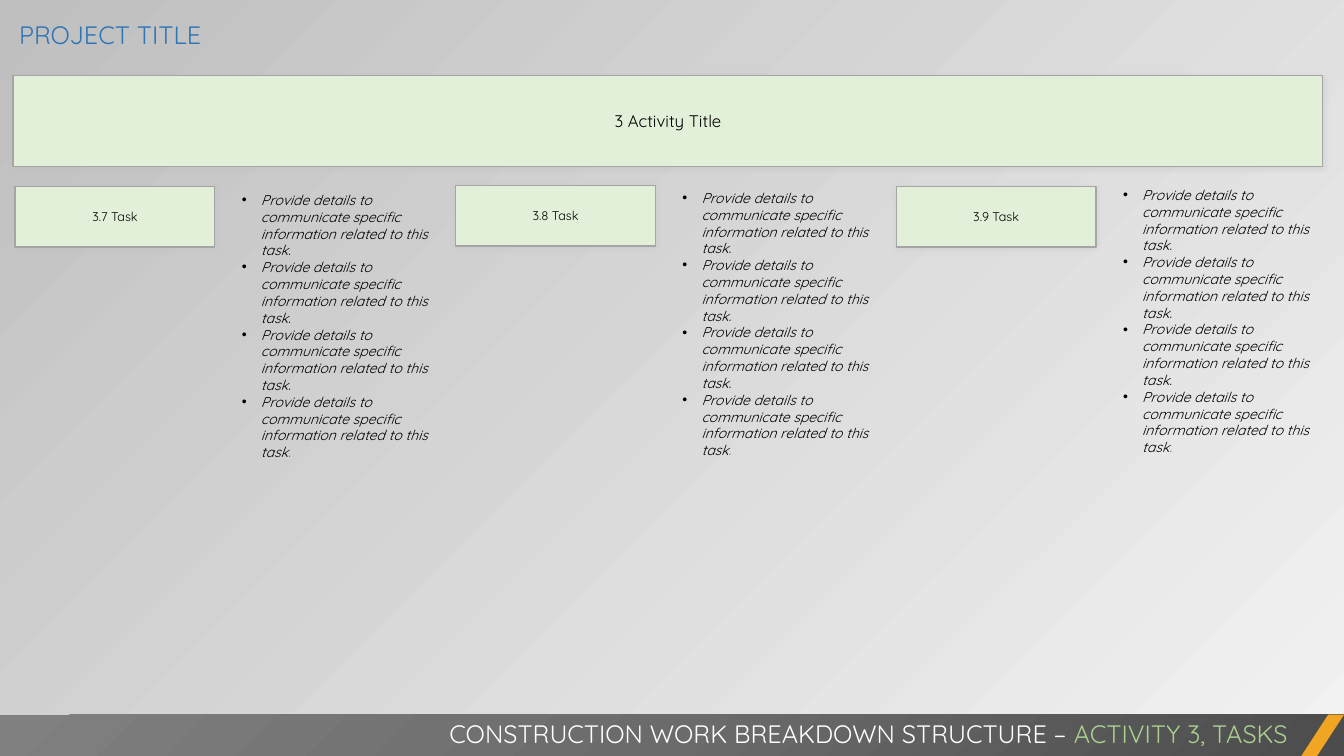
from dataclasses import dataclass

from pptx import Presentation
from pptx.dml.color import RGBColor
from pptx.enum.shapes import MSO_SHAPE as Kind
from pptx.enum.text import MSO_ANCHOR as Anchor, MSO_AUTO_SIZE as Fit, PP_ALIGN as Align
from pptx.oxml import parse_xml
from pptx.oxml.ns import nsdecls, qn
from pptx.util import Inches, Pt

# Colours
BLACK = RGBColor(0x00, 0x00, 0x00)
WHITE = RGBColor(0xFF, 0xFF, 0xFF)
LIGHT = RGBColor(0xF2, 0xF2, 0xF2)
SILVER = RGBColor(0xBF, 0xBF, 0xBF)
GREY = RGBColor(0xA5, 0xA5, 0xA5)
PALE = RGBColor(0xE2, 0xF0, 0xD9)
GREEN = RGBColor(0xA9, 0xD1, 0x8E)
BLUE = RGBColor(0x2E, 0x75, 0xB6)
AMBER = RGBColor(0xF0, 0xA6, 0x22)
BAR = ((0, RGBColor(0x4C, 0x4C, 0x4C)), (50, RGBColor(0x6B, 0x6B, 0x6B)),
       (100, RGBColor(0x80, 0x80, 0x80)))

# Grid, in inches
WIDE, HIGH = 13.33, 7.5
LEFT, STEP = 0.15, 4.37   # first column and column pitch
SHIFT = 2.15              # from a task to its details
FOOT, DEPTH = 7.09, 0.42  # footer bar

FACE = "Quicksand"
DETAIL = "Provide details to communicate specific information related to this task"
COUNT = 4


@dataclass(frozen=True)
class Task:
    label: str
    top: float
    note_top: float


TASKS = (Task("3.7 Task", 1.85, 1.85),
         Task("3.8 Task", 1.84, 1.83),
         Task("3.9 Task", 1.85, 1.80))

deck = Presentation()
deck.slide_width, deck.slide_height = Inches(WIDE), Inches(HIGH)
slide = deck.slides.add_slide(deck.slide_layouts[6])


def style(para, size: float, color: RGBColor, italic: bool = False) -> None:
    font = para.font
    font.name, font.size, font.italic = FACE, Pt(size), italic
    font.color.rgb = color


def add_plain(kind, x: float, y: float, w: float, h: float, color: RGBColor):
    shape = slide.shapes.add_shape(kind, *map(Inches, (x, y, w, h)))
    shape.shadow.inherit = False
    shape.fill.solid()
    shape.fill.fore_color.rgb = color
    shape.line.fill.background()
    return shape


def add_card(text: str, x: float, y: float, w: float, h: float, size: float) -> None:
    card = add_plain(Kind.RECTANGLE, x, y, w, h, PALE)
    card.line.color.rgb, card.line.width = GREY, Pt(1)
    card._element.spPr.find(qn("a:effectLst")).append(parse_xml(
        f'<a:outerShdw {nsdecls("a")} blurRad="{Pt(4)}" dist="{Pt(1)}" dir="5400000" '
        f'algn="t" rotWithShape="0"><a:srgbClr val="{SILVER}"><a:alpha val="40000"/>'
        '</a:srgbClr></a:outerShdw>'))
    card.text_frame.vertical_anchor = Anchor.MIDDLE
    para = card.text_frame.paragraphs[0]
    para.text, para.alignment = text, Align.CENTER
    style(para, size, BLACK)


def add_box(x: float, y: float, w: float, h: float):
    frame = slide.shapes.add_textbox(*map(Inches, (x, y, w, h))).text_frame
    frame.word_wrap, frame.auto_size = True, Fit.SHAPE_TO_FIT_TEXT
    return frame


def add_run(para, text: str, color: RGBColor) -> None:
    run = para.add_run()
    run.text = text
    run.font.color.rgb = color


def add_notes(x: float, y: float) -> None:
    frame = add_box(x, y, 2.06, 3)
    for i in range(COUNT):
        para = frame.add_paragraph() if i else frame.paragraphs[0]
        props = para._p.get_or_add_pPr()
        props.set("marL", str(Inches(0.19)))
        props.set("indent", str(Inches(-0.19)))
        props.append(parse_xml(f'<a:buFont {nsdecls("a")} typeface="Arial"/>'))
        props.append(parse_xml(f'<a:buChar {nsdecls("a")} char="•"/>'))
        style(para, 10, BLACK, italic=True)
        last = i == COUNT - 1
        para.add_run().text = DETAIL if last else DETAIL + "."
        if last:
            add_run(para, ".", BLUE)


# Background
back = slide.background.fill
back.gradient()
back.gradient_angle = 135
for stop, shade in zip(back.gradient_stops, (LIGHT, SILVER)):
    stop.color.rgb = shade

# Activity banner
add_card("3 Activity Title", 0.13, 0.75, 12.99, 0.9, 12)

# Footer bar with a radial fill from its right corner
bar = add_plain(Kind.RECTANGLE, 0, FOOT, WIDE, DEPTH, BAR[0][1])
stops = "".join(f'<a:gs pos="{at * 1000}"><a:srgbClr val="{shade}"/></a:gs>'
                for at, shade in BAR)
props = bar._element.spPr
props.replace(props.find(qn("a:solidFill")), parse_xml(
    f'<a:gradFill {nsdecls("a")} rotWithShape="1"><a:gsLst>{stops}</a:gsLst>'
    '<a:path path="circle"><a:fillToRect l="100000" t="100000"/></a:path></a:gradFill>'))
slash = add_plain(Kind.PARALLELOGRAM, 12.9, FOOT, 0.43, DEPTH, AMBER)
slash.adjustments[0] = 0.65

# Footer and project titles
foot = add_box(2.44, 7.08, 10.43, 0.4).paragraphs[0]
foot.alignment = Align.RIGHT
style(foot, 18, WHITE)
add_run(foot, "CONSTRUCTION WORK BREAKDOWN STRUCTURE – ", WHITE)
add_run(foot, "ACTIVITY 3, TASKS", GREEN)
head = add_box(0.09, 0.14, 10.11, 0.4).paragraphs[0]
head.text = "PROJECT TITLE"
style(head, 18, BLUE)

# Task columns
for col, task in enumerate(TASKS):
    x = LEFT + col * STEP
    add_card(task.label, x, task.top, 1.98, 0.6, 9)
    add_notes(x + SHIFT, task.note_top)

deck.save("out.pptx")
